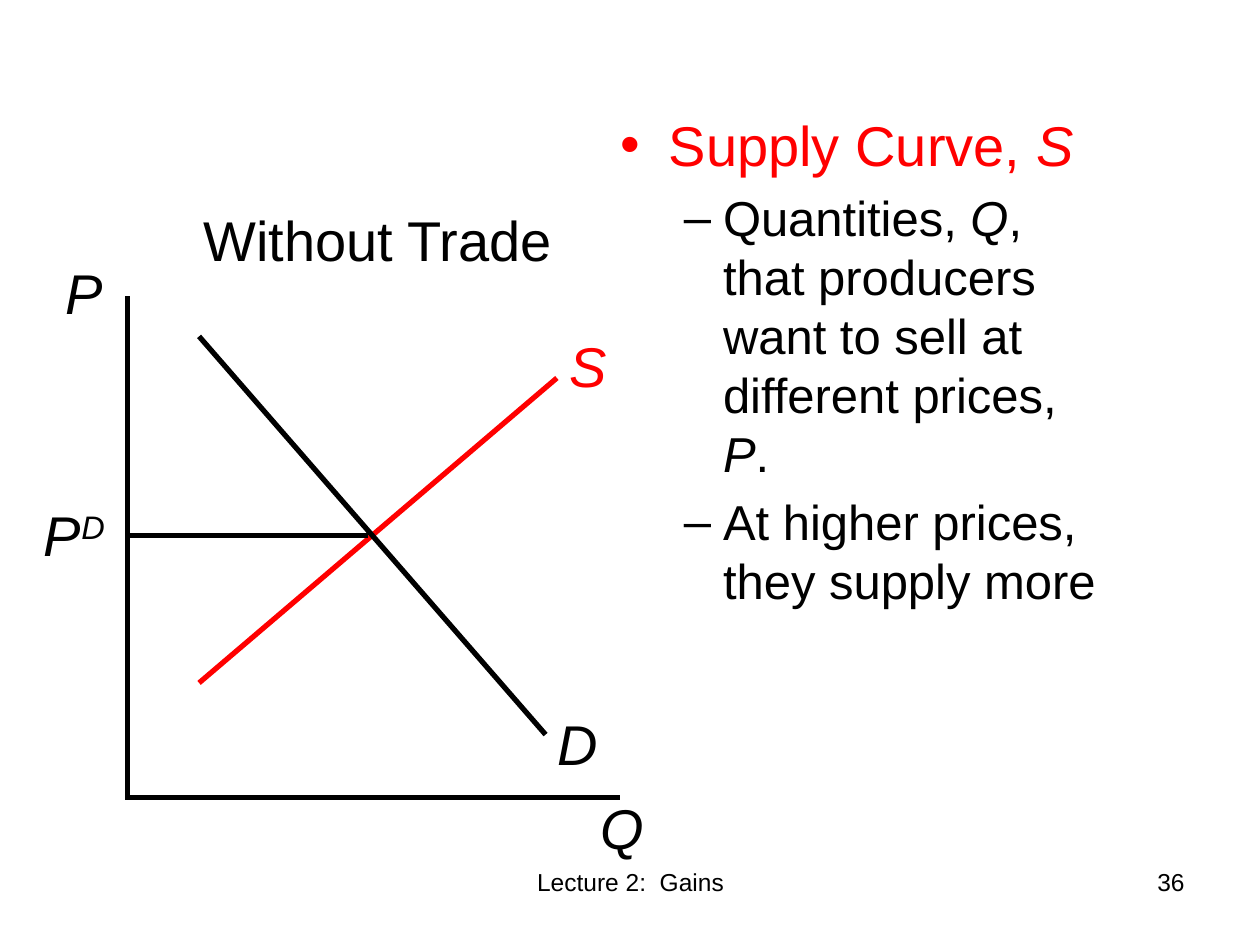
from lxml import etree
from pptx import Presentation
from pptx.dml.color import RGBColor
from pptx.enum.shapes import MSO_CONNECTOR
from pptx.enum.text import MSO_AUTO_SIZE, PP_ALIGN
from pptx.oxml.ns import qn
from pptx.util import Inches, Pt

STRAIGHT = MSO_CONNECTOR.STRAIGHT
GROW = MSO_AUTO_SIZE.SHAPE_TO_FIT_TEXT
LEFT, CENTER, RIGHT = PP_ALIGN.LEFT, PP_ALIGN.CENTER, PP_ALIGN.RIGHT

FONT = "Arial"
COLORS = {"ink": "000000", "supply": "FF0000"}


def add_run(para, text, size, color="ink", italic=False):
    run = para.add_run()
    run.text = text
    font = run.font
    font.name, font.size, font.italic = FONT, Pt(size), italic
    font.color.rgb = RGBColor.from_string(COLORS[color])
    return run


def add_box(slide, left, top, width, height, align=LEFT):
    """Add a wrapping text box; return its frame and first paragraph."""
    box = slide.shapes.add_textbox(
        Inches(left), Inches(top), Inches(width), Inches(height))
    frame = box.text_frame
    frame.word_wrap = True
    para = frame.paragraphs[0]
    para.alignment = align
    return frame, para


def add_label(slide, left, top, text, color="ink", width=2, italic=True,
              align=LEFT):
    frame, para = add_box(slide, left, top, width, 0.64, align)
    frame.auto_size = GROW
    add_run(para, text, 32, color, italic)
    return para


def add_line(slide, start, end, color="ink"):
    line = slide.shapes.add_connector(
        STRAIGHT, *(Inches(n) for n in (*start, *end)))
    line.line.color.rgb = RGBColor.from_string(COLORS[color])
    line.line.width = Pt(3)
    etree.SubElement(line._element.spPr, qn("a:effectLst"))


def set_bullet(para, mark, margin, hang, size):
    para.space_before = Pt(size * 0.2)
    props = para._p.get_or_add_pPr()
    props.set("marL", str(Inches(margin)))
    props.set("indent", str(Inches(-hang)))
    etree.SubElement(props, qn("a:buFont")).set("typeface", FONT)
    etree.SubElement(props, qn("a:buChar")).set("char", mark)


def add_graph(slide, left, top):
    """Draw the market graph with its title; left, top is its corner."""
    def at(x, y):
        return left + x, top + y

    # Axes and curves
    add_line(slide, at(0.76, 0.77), at(0.76, 4.77))
    add_line(slide, at(4.17, 1.42), at(1.33, 3.84), "supply")
    add_line(slide, at(4.67, 4.75), at(0.75, 4.75))
    add_line(slide, at(4.08, 4.25), at(1.33, 1.09))

    # Curve and axis names
    add_label(slide, *at(4.17, 1), "S", "supply")
    add_label(slide, *at(4.08, 4), "D")
    add_label(slide, *at(4.42, 4.67), "Q")
    add_label(slide, *at(0.17, 0.42), "P")

    # Price without trade
    price = add_label(slide, *at(0, 2.34), "P")
    raised = add_run(price, "D", 32, italic=True)
    raised.font._element.set("baseline", "30000")
    add_line(slide, at(2.67, 2.67), at(0.75, 2.67))

    # Title
    add_label(slide, *at(1.25, 0), "Without Trade", width=3, italic=False,
              align=CENTER)


def add_notes(slide, left, top, width, height):
    """Write the bulleted text; each run is a (text, italic) pair."""
    frame, head = add_box(slide, left, top, width, height)
    set_bullet(head, "•", 0.38, 0.38, 32)
    add_run(head, "Supply Curve, ", 32, "supply")
    add_run(head, "S", 32, "supply", True)

    points = [
        [("Quantities, ", False), ("Q", True),
         (", that producers want to sell at different prices, ", False),
         ("P", True), (".", False)],
        [("At higher prices, they supply more", False)],
    ]
    for runs in points:
        para = frame.add_paragraph()
        para.level = 1
        set_bullet(para, "–", 0.81, 0.31, 28)
        for text, italic in runs:
            add_run(para, text, 28, italic=italic)


def add_footer(slide, top, height):
    for left, width, text, align in (
            (3.42, 3.17, "Lecture 2:  Gains", CENTER),
            (7.17, 2.33, "36", RIGHT)):
        para = add_box(slide, left, top, width, height, align)[1]
        add_run(para, text, 14)


def main():
    deck = Presentation()
    deck.slide_width, deck.slide_height = Inches(10), Inches(7.5)
    slide = deck.slides.add_slide(deck.slide_layouts[6])
    add_footer(slide, 6.83, 0.52)
    add_graph(slide, 0.25, 1.58)
    add_notes(slide, 4.83, 0.83, 4.08, 3.17)
    deck.save("out.pptx")


if __name__ == "__main__":
    main()
